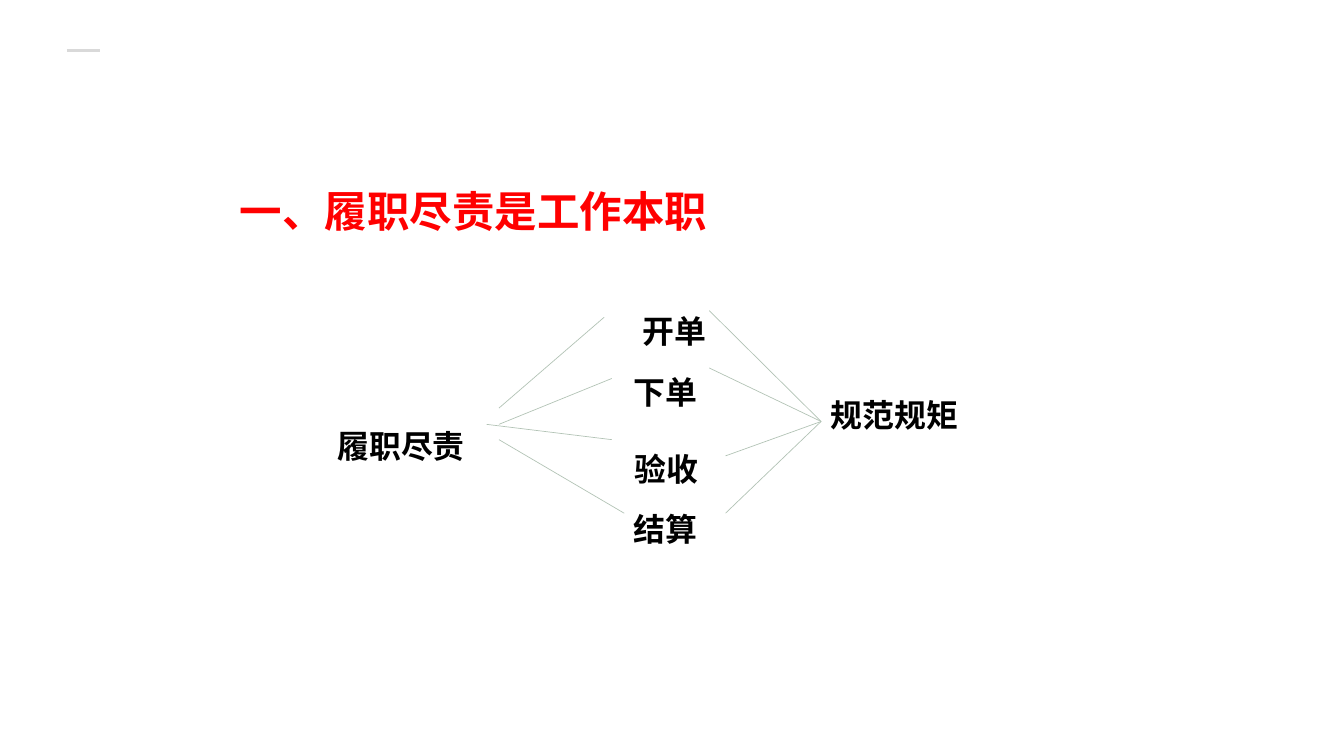
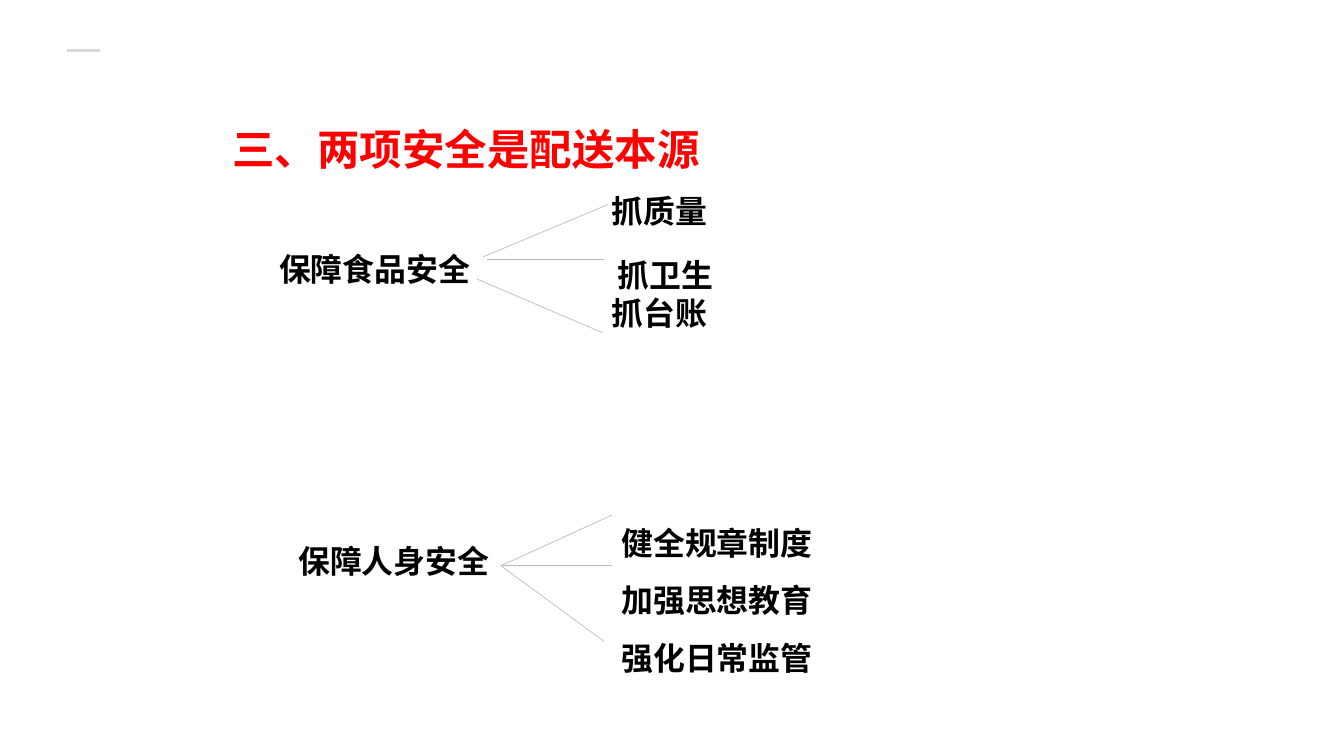
from lxml import etree
from pptx import Presentation
from pptx.dml.color import RGBColor
from pptx.enum.shapes import MSO_CONNECTOR
from pptx.enum.text import MSO_ANCHOR
from pptx.oxml.ns import qn
from pptx.util import Inches, Pt

STRAIGHT = MSO_CONNECTOR.STRAIGHT
MIDDLE = MSO_ANCHOR.MIDDLE

FONT = "Calibri"
RED, BLACK, BRANCH, ACCENT = "FF0000", "000000", "B1C2B4", "D9D9D9"
TITLE_SIZE, LABEL_SIZE = 32, 24

# Safety measures form an evenly spaced list
MEASURES = ["健全规章制度", "加强思想教育", "强化日常监管"]
MEASURE_TOP, MEASURE_STEP = 5.68, 0.6

DUTY_HUB, RULES_HUB, PERSONAL_HUB = (5.22, 4.44), (8.59, 4.41), (5.24, 5.92)

# title and labels: text, left, vertical centre; branches: start, end
SLIDES = [
    {
        "title": ("一、履职尽责是工作本职", 2.51, 2.2),
        "labels": [
            ("履职尽责", 3.53, 4.66),
            ("开单", 6.72, 3.46),
            ("下单", 6.63, 4.1),
            ("验收", 6.64, 4.9),
            ("结算", 6.63, 5.53),
            ("规范规矩", 8.69, 4.34),
        ],
        "branches": [
            ((5.22, 4.27), (6.32, 3.32)),
            (DUTY_HUB, (6.4, 3.96)),
            ((5.09, 4.44), (6.4, 4.6)),
            ((5.22, 4.6), (6.53, 5.37)),
        ] + [(start, RULES_HUB) for start in
             [(7.42, 3.25), (7.42, 3.85), (7.59, 4.77), (7.59, 5.37)]],
    },
    {
        "title": ("三、两项安全是配送本源", 2.43, 1.55),
        "labels": [
            ("保障食品安全", 2.92, 2.81),
            ("抓质量", 6.4, 2.21),
            ("抓卫生", 6.46, 2.87),
            ("抓台账", 6.4, 3.27),
            ("保障人身安全", 3.12, 5.87),
        ] + [(text, 6.5, MEASURE_TOP + i * MEASURE_STEP)
             for i, text in enumerate(MEASURES)],
        "branches": [
            ((5.05, 2.69), (6.36, 2.14)),
            ((5.09, 2.71), (6.32, 2.71)),
            ((4.99, 2.92), (6.3, 3.48)),
        ] + [(PERSONAL_HUB, end) for end in
             [(6.4, 5.39), (6.4, 5.92), (6.32, 6.71)]],
    },
]


def rgb(color):
    return RGBColor.from_string(color)


def add_line(s, start, end, color, width):
    line = s.shapes.add_connector(STRAIGHT, *map(Inches, start + end))
    line.line.color.rgb = rgb(color)
    line.line.width = Pt(width)
    etree.SubElement(line._element.spPr, qn("a:effectLst"))


def add_label(s, text, left, middle, size=LABEL_SIZE, color=BLACK):
    """Place one bold line of text, centred vertically on middle."""
    width = len(text) * size / 72 + 0.15
    height = size / 48
    sp = s.shapes.add_textbox(Inches(left), Inches(middle - height / 2),
                              Inches(width), Inches(height))
    tf = sp.text_frame
    tf.word_wrap = True
    tf.vertical_anchor = MIDDLE
    tf.margin_left = tf.margin_right = tf.margin_top = tf.margin_bottom = 0
    tf.text = text
    font = tf.paragraphs[0].runs[0].font
    font.name, font.size, font.bold = FONT, Pt(size), True
    font.color.rgb = rgb(color)


def build_slide(prs, content):
    s = prs.slides.add_slide(prs.slide_layouts[6])
    # Corner accent and title
    add_line(s, (0.7, 0.53), (1.05, 0.53), ACCENT, 2)
    add_label(s, *content["title"], size=TITLE_SIZE, color=RED)
    # Diagram
    for start, end in content["branches"]:
        add_line(s, start, end, BRANCH, 0.5)
    for label in content["labels"]:
        add_label(s, *label)


def main():
    prs = Presentation()
    prs.slide_width, prs.slide_height = Inches(14.06), Inches(7.91)
    for content in SLIDES:
        build_slide(prs, content)
    prs.save("out.pptx")


if __name__ == "__main__":
    main()
